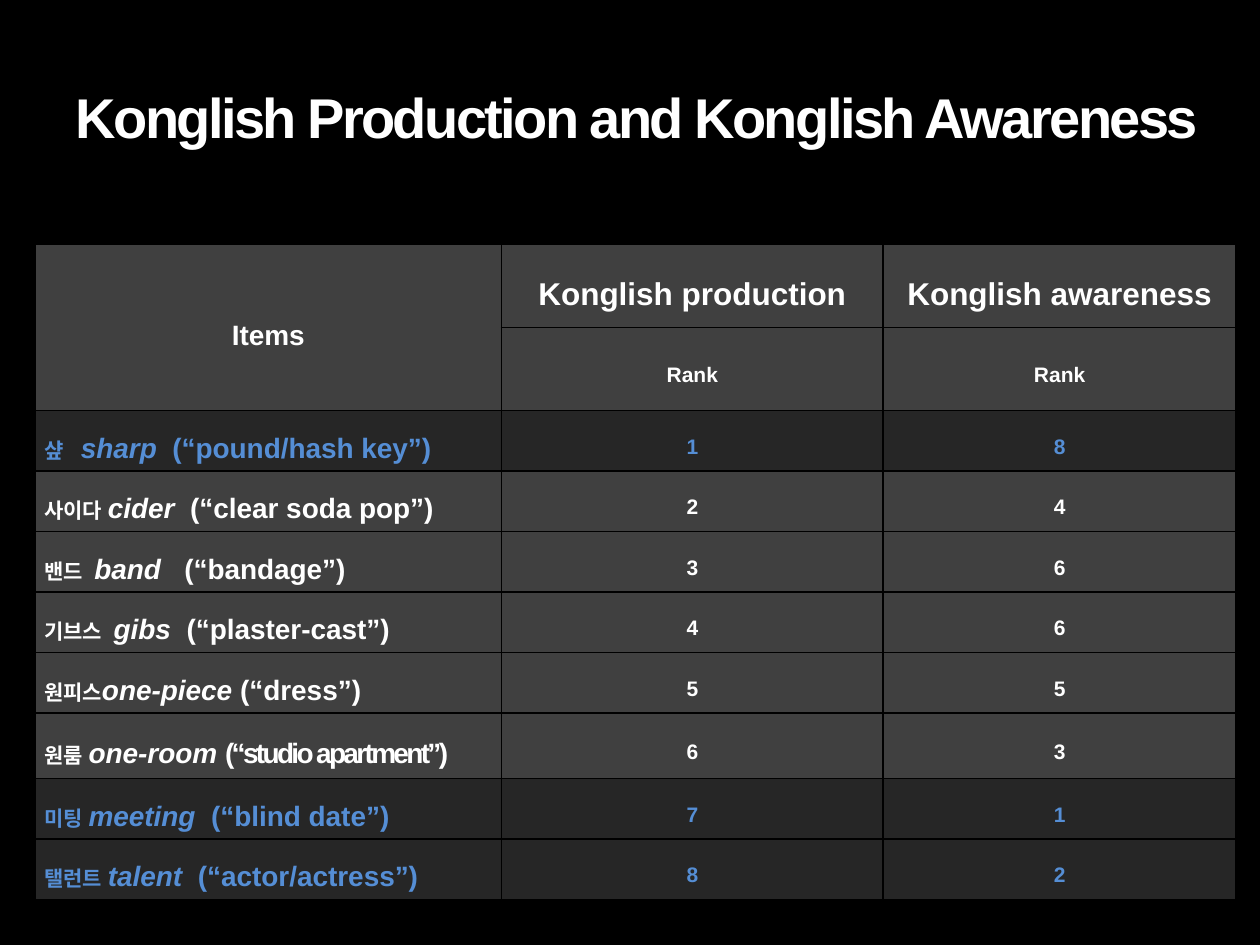
from pptx import Presentation
from pptx.dml.color import RGBColor
from pptx.enum.text import MSO_ANCHOR as Anchor, PP_ALIGN as Align
from pptx.oxml import parse_xml
from pptx.oxml.ns import nsdecls
from pptx.util import Inches, Pt

BLACK = RGBColor(0x00, 0x00, 0x00)
WHITE = RGBColor(0xFF, 0xFF, 0xFF)
BLUE = RGBColor(0x55, 0x8E, 0xD5)
GRAY = RGBColor(0x40, 0x40, 0x40)
DARK = RGBColor(0x26, 0x26, 0x26)

# Korean word, romanised word, meaning, production rank, awareness rank
ITEMS = [
    ("샾   ", "sharp", "  (“pound/hash key”)", 1, 8),
    ("사이다 ", "cider", "  (“clear soda pop”)", 2, 4),
    ("밴드  ", "band", "   (“bandage”)", 3, 6),
    ("기브스  ", "gibs", "  (“plaster-cast”)", 4, 6),
    ("원피스", "one-piece", " (“dress”)", 5, 5),
    ("원룸 ", "one-room ", "(“studio apartment”)", 6, 3),
    ("미팅 ", "meeting", "  (“blind date”)", 7, 1),
    ("탤런트 ", "talent", "  (“actor/actress”)", 8, 2),
]
HIGHLIGHTED = {"sharp", "meeting", "talent"}
TIGHT = -150  # letter spacing in hundredths of a point


def add_span(para, text, size, color=WHITE, italic=False, spacing=None):
    span = para.add_run()
    span.text = text
    formats = {"name": "Arial", "size": Pt(size), "bold": True, "italic": italic}
    for name, value in formats.items():
        setattr(span.font, name, value)
    span.font.color.rgb = color
    # East Asian text uses the same typeface
    span.font._element.append(parse_xml(f'<a:ea {nsdecls("a")} typeface="Arial"/>'))
    if spacing is not None:
        span.font._element.set("spc", str(spacing))


def format_cell(cell, fill, align=Align.CENTER):
    formats = {
        "vertical_anchor": Anchor.MIDDLE,
        "margin_left": Inches(0.07), "margin_right": Inches(0.07),
        "margin_top": 0, "margin_bottom": 0,
    }
    for name, value in formats.items():
        setattr(cell, name, value)
    properties = cell._tc.get_or_add_tcPr()
    for side in "LRTB":
        properties.append(parse_xml(
            f'<a:ln{side} {nsdecls("a")} w="12700"><a:solidFill>'
            f'<a:srgbClr val="{BLACK}"/></a:solidFill></a:ln{side}>'))
    cell.fill.solid()
    cell.fill.fore_color.rgb = fill
    para = cell.text_frame.paragraphs[0]
    para.alignment = align
    para.line_spacing = 1.5
    return para


deck = Presentation()
deck.slide_width, deck.slide_height = Inches(10), Inches(7.5)
page = deck.slides.add_slide(deck.slide_layouts[5])
page.background.fill.solid()
page.background.fill.fore_color.rgb = BLACK

# Title
title = page.shapes.title
title.left, title.top = Inches(0.5), Inches(0.3)
title.width, title.height = Inches(9.5), Inches(1.25)
title.text_frame.vertical_anchor = Anchor.MIDDLE
para = title.text_frame.paragraphs[0]
para.alignment = Align.LEFT
add_span(para, "Konglish Production and Konglish Awareness", 32, spacing=TIGHT)

# Table grid
widths = [3.7, 3.03, 2.8]
heights = [0.66] * 2 + [0.48] * 5 + [0.52] + [0.48] * 2
table = page.shapes.add_table(
    len(heights), len(widths), Inches(0.28), Inches(1.94),
    Inches(sum(widths)), Inches(sum(heights))).table
for column, width in zip(table.columns, widths):
    column.width = Inches(width)
for row, height in zip(table.rows, heights):
    row.height = Inches(height)

# Two header rows, with the first column merged
table.cell(0, 0).merge(table.cell(1, 0))
headers = [
    [("Items", 16), ("Konglish production", 18), ("Konglish awareness", 18)],
    [None, ("Rank", 12), ("Rank", 12)],
]
for row, labels in enumerate(headers):
    for column, label in enumerate(labels):
        para = format_cell(table.cell(row, column), GRAY)
        if label:
            add_span(para, *label)

# Item rows
for row, (korean, word, meaning, *ranks) in enumerate(ITEMS, start=len(headers)):
    fill, color = (DARK, BLUE) if word in HIGHLIGHTED else (GRAY, WHITE)
    para = format_cell(table.cell(row, 0), fill, Align.JUSTIFY)
    add_span(para, korean, 12, color)
    add_span(para, word, 16, color, italic=True)
    add_span(para, meaning, 16, color, spacing=TIGHT if "studio" in meaning else None)
    for column, rank in enumerate(ranks, start=1):
        add_span(format_cell(table.cell(row, column), fill), str(rank), 12, color)

deck.save("out.pptx")
